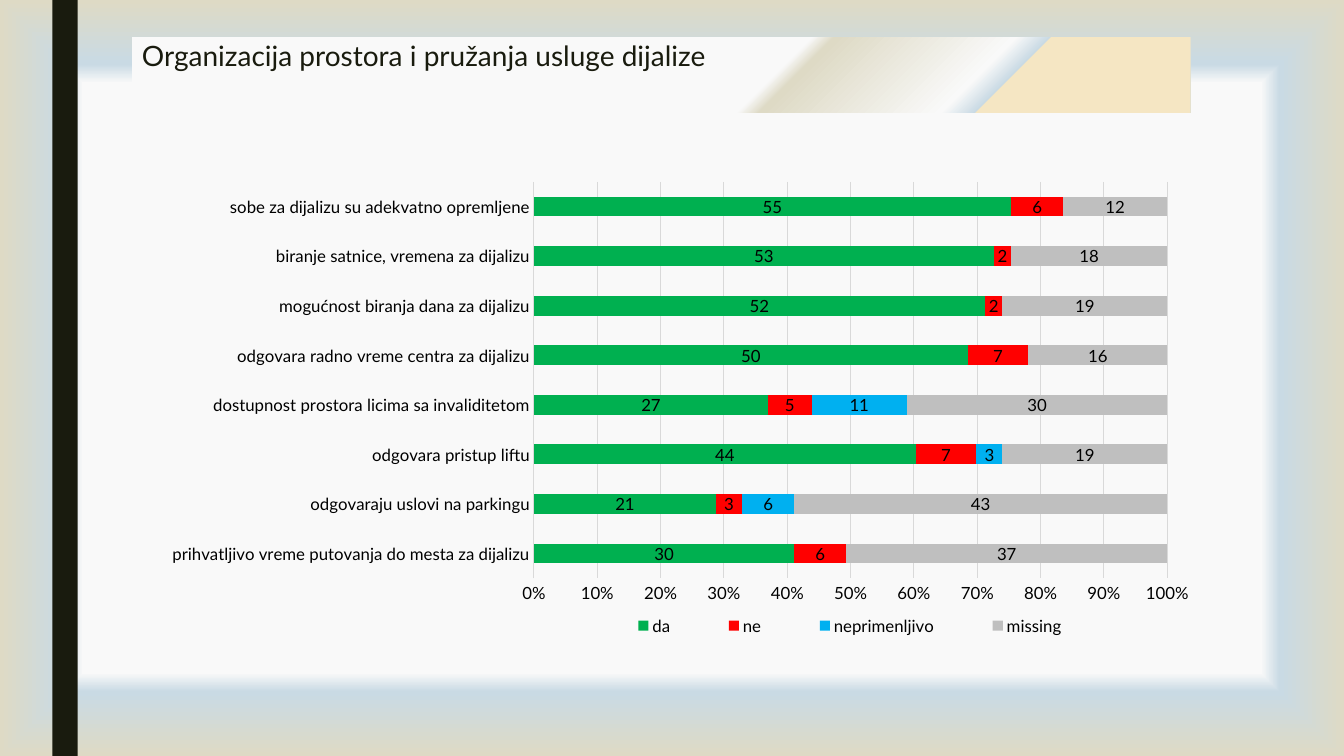
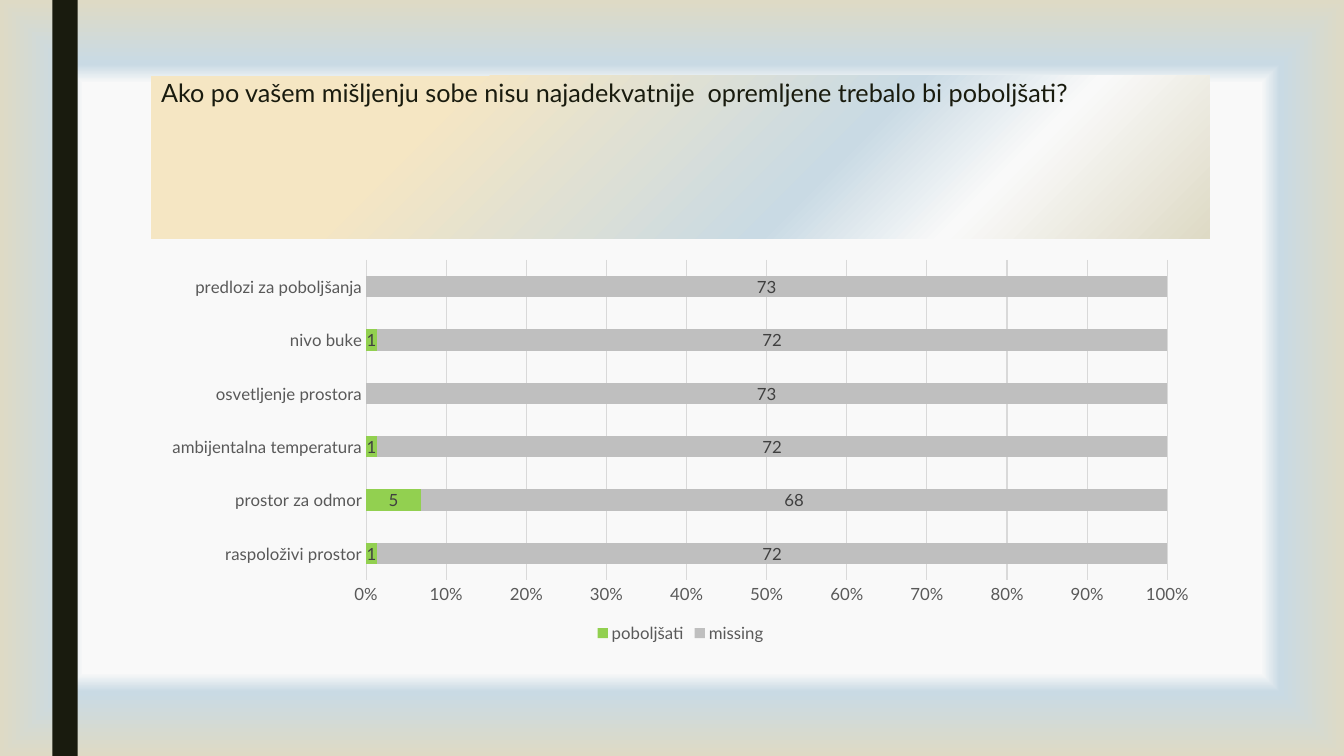
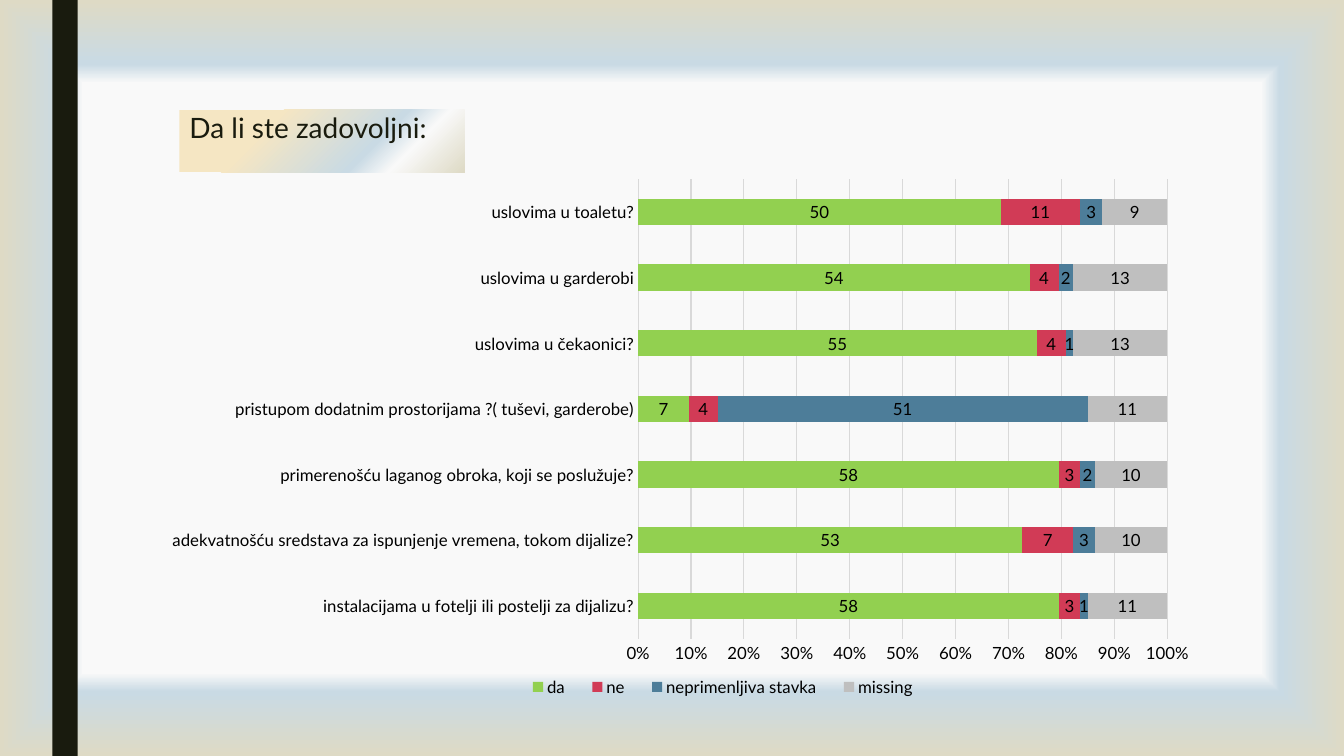
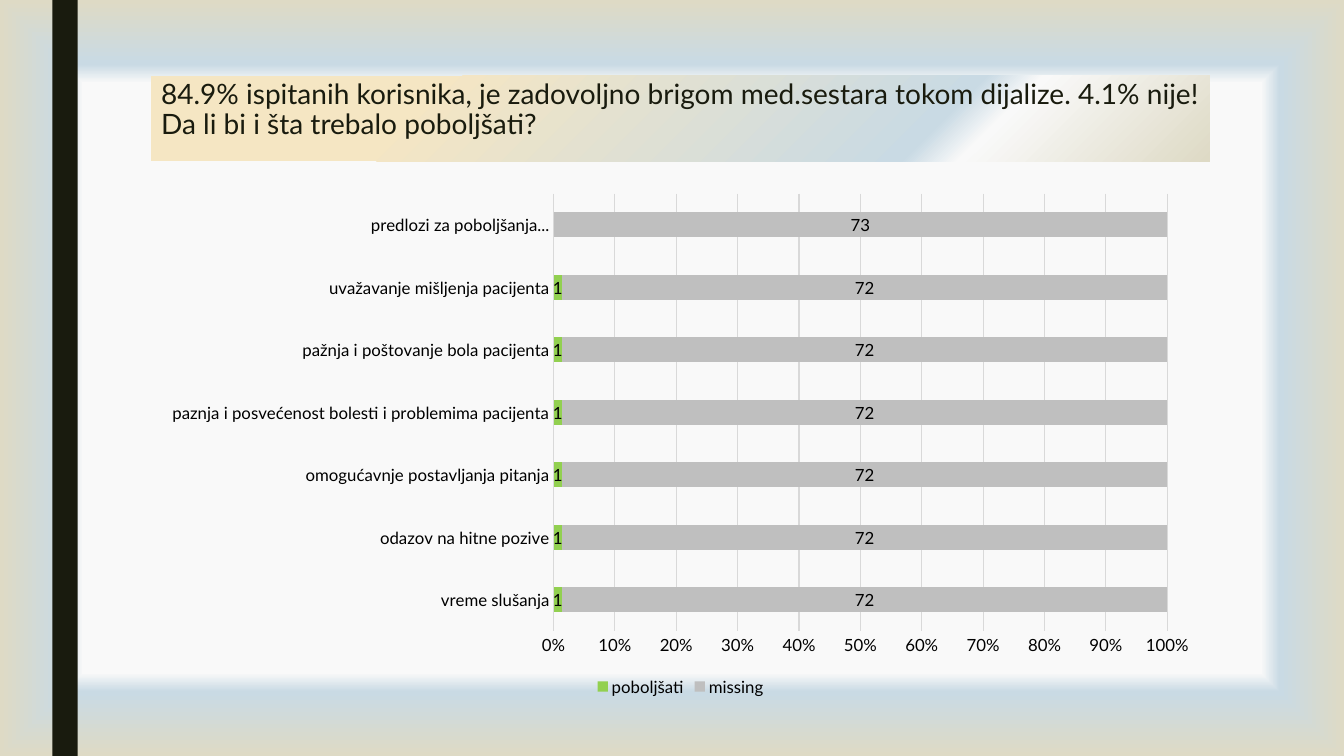
from dataclasses import dataclass
from typing import Optional

from pptx import Presentation
from pptx import util as u
from pptx.chart import data as cd
from pptx.dml.color import RGBColor
from pptx.enum import chart as ce
from pptx.enum import shapes, text
from pptx.oxml import ns, parse_xml

FONT = "Lato"
INK = RGBColor(0x19, 0x1B, 0x0E)
BLACK = RGBColor(0x00, 0x00, 0x00)
GREY = RGBColor(0x59, 0x59, 0x59)
DARK = RGBColor(0x40, 0x40, 0x40)
RULE = RGBColor(0xD9, 0xD9, 0xD9)
PALE = RGBColor(0xF9, 0xF9, 0xF9)
BLUE = RGBColor(0xC9, 0xDA, 0xE4)
SAND = RGBColor(0xDE, 0xDA, 0xC5)
CREAM = RGBColor(0xF5, 0xE6, 0xC3)
GREEN = RGBColor(0x00, 0xB0, 0x50)
LIME = RGBColor(0x92, 0xD0, 0x50)
RED = RGBColor(0xFF, 0x00, 0x00)
ROSE = RGBColor(0xD1, 0x3B, 0x56)
SKY = RGBColor(0x00, 0xB0, 0xF0)
STEEL = RGBColor(0x4D, 0x7D, 0x99)
SILVER = RGBColor(0xBF, 0xBF, 0xBF)

Stops = list[tuple[int, RGBColor]]
Box = tuple[float, float, float, float]

BACK: Stops = [(78, PALE), (83, BLUE), (100, SAND), (100, CREAM)]
CENTRE = ('<a:path path="shape"><a:fillToRect l="50000" t="50000" '
          'r="50000" b="50000"/></a:path>')
SLANT = '<a:lin ang="2700000" scaled="0"/>'


@dataclass
class Title:
    box: Box
    lines: list[str]
    stops: Stops
    size: int = 20


@dataclass
class Series:
    name: str
    color: RGBColor
    vals: list[Optional[int]]


@dataclass
class Graph:
    box: Box
    cats: list[str]
    series: list[Series]
    ink: RGBColor = BLACK
    label: RGBColor = BLACK
    legend: Optional[Box] = None


@dataclass
class Page:
    title: Title
    graph: Graph
    front: bool = False


PAGES = [
    Page(
        Title((1.31, 0.37, 10.5, 0.75),
              ["Organizacija prostora i pružanja usluge dijalize"],
              [(60, PALE), (62, SAND), (78, PALE), (81, BLUE), (81, CREAM)]),
        Graph((1.5, 1.71, 10.5, 4.71),
              ["prihvatljivo vreme putovanja do mesta za dijalizu",
               "odgovaraju uslovi na parkingu",
               "odgovara pristup liftu",
               "dostupnost prostora licima sa invaliditetom",
               "odgovara radno vreme centra za dijalizu",
               "mogućnost biranja dana za dijalizu",
               "biranje satnice, vremena za dijalizu",
               "sobe za dijalizu su adekvatno opremljene"],
              [Series("da", GREEN, [30, 21, 44, 27, 50, 52, 53, 55]),
               Series("ne", RED, [6, 3, 7, 5, 7, 2, 2, 6]),
               Series("neprimenljivo", SKY, [None, 6, 3, 11] + [None] * 4),
               Series("missing", SILVER, [37, 43, 19, 30, 16, 19, 18, 12])],
              legend=(0.41, 0.92, 0.5, 0.07)),
        front=True),
    Page(
        Title((1.5, 0.75, 10.5, 1.62),
              ["Ako po vašem mišljenju sobe nisu najadekvatnije  "
               "opremljene trebalo bi poboljšati?"],
              [(26, CREAM), (63, BLUE), (78, PALE), (100, SAND)], 18),
        Graph((1.5, 2.5, 10.5, 3.92),
              ["raspoloživi prostor", "prostor za odmor",
               "ambijentalna temperatura", "osvetljenje prostora",
               "nivo buke", "predlozi za poboljšanja"],
              [Series("poboljšati", LIME, [1, 5, 1, None, 1, None]),
               Series("missing", SILVER, [72, 68, 72, 73, 72, 73])],
              GREY, DARK)),
    Page(
        Title((1.78, 1.09, 2.83, 0.62), ["Da li ste zadovoljni:"],
              [(17, CREAM), (30, CREAM), (66, BLUE), (78, PALE), (100, SAND)]),
        Graph((1.5, 1.67, 10.5, 5.36),
              ["instalacijama u fotelji ili postelji za dijalizu?",
               "adekvatnošću sredstava za ispunjenje vremena, tokom dijalize?",
               "primerenošću laganog obroka, koji se poslužuje?",
               "pristupom dodatnim prostorijama ?( tuševi, garderobe)",
               "uslovima u čekaonici?",
               "uslovima u garderobi",
               "uslovima u toaletu?"],
              [Series("da", LIME, [58, 53, 58, 7, 55, 54, 50]),
               Series("ne", ROSE, [3, 7, 3, 4, 4, 4, 11]),
               Series("neprimenljiva stavka", STEEL, [1, 3, 2, 51, 1, 2, 3]),
               Series("missing", SILVER, [11, 10, 10, 11, 13, 13, 9])],
              legend=(0.34, 0.93, 0.4, 0.06))),
    Page(
        Title((1.5, 0.75, 10.5, 0.85),
              ["84.9% ispitanih korisnika, je zadovoljno brigom med.sestara "
               "tokom dijalize. 4.1% nije!",
               "Da li bi i šta trebalo poboljšati?"],
              [(25, CREAM), (73, BLUE), (78, PALE), (100, SAND)]),
        Graph((1.5, 1.82, 10.5, 5.13),
              ["vreme slušanja", "odazov na hitne pozive",
               "omogućavnje postavljanja pitanja",
               "paznja i posvećenost bolesti i problemima pacijenta",
               "pažnja i poštovanje bola pacijenta",
               "uvažavanje mišljenja pacijenta",
               "predlozi za poboljšanja..."],
              [Series("poboljšati", LIME, [1] * 6 + [None]),
               Series("missing", SILVER, [72] * 6 + [73])])),
]


def place(box: Box) -> list[u.Length]:
    return [u.Inches(n) for n in box]


def blend(fill, root, stops: Stops, mode: str) -> None:
    fill.gradient()
    old = root.find(".//" + ns.qn("a:gradFill"))
    marks = "".join(
        f'<a:gs pos="{pos * 1000}"><a:srgbClr val="{color}"/></a:gs>'
        for pos, color in stops)
    new = parse_xml(f'<a:gradFill {ns.nsdecls("a")} rotWithShape="1">'
                    f'<a:gsLst>{marks}</a:gsLst>{mode}</a:gradFill>')
    old.getparent().replace(old, new)


def style(font, size: int, color: RGBColor) -> None:
    font.name = FONT
    font.size = u.Pt(size)
    font.color.rgb = color


def add_band(slide) -> None:
    band = slide.shapes.add_shape(shapes.MSO_SHAPE.RECTANGLE,
                                  *place((0.52, 0, 0.25, 7.5)))
    band.shadow.inherit = False
    band.fill.solid()
    band.fill.fore_color.rgb = INK
    band.line.fill.background()


def add_title(slide, title: Title) -> None:
    box = slide.shapes.add_textbox(*place(title.box))
    blend(box.fill, box.element, title.stops, SLANT)
    frame = box.text_frame
    frame.word_wrap = True
    frame.auto_size = text.MSO_AUTO_SIZE.NONE
    frame.vertical_anchor = text.MSO_ANCHOR.TOP
    para = frame.paragraphs[0]
    para.line_spacing = 0.89
    for i, line in enumerate(title.lines):
        if i:
            para.add_line_break()
        run = para.add_run()
        run.text = line
        style(run.font, title.size, INK)


def set_legend(chart, graph: Graph) -> None:
    chart.has_legend = True
    legend = chart.legend
    legend.position = ce.XL_LEGEND_POSITION.BOTTOM
    legend.include_in_layout = False
    style(legend.font, 12, graph.ink)
    if graph.legend:
        root = chart.element.find(".//" + ns.qn("c:legend"))
        for old in root.findall(ns.qn("c:layout")):
            root.remove(old)
        sizes = "".join(f'<c:{key} val="{val}"/>'
                        for key, val in zip("xywh", graph.legend))
        root.find(ns.qn("c:legendPos")).addnext(parse_xml(
            f'<c:layout {ns.nsdecls("c")}><c:manualLayout>'
            '<c:xMode val="edge"/><c:yMode val="edge"/>'
            f'{sizes}</c:manualLayout></c:layout>'))


def add_graph(slide, graph: Graph) -> None:
    data = cd.CategoryChartData()
    data.categories = graph.cats
    for item in graph.series:
        data.add_series(item.name, item.vals)
    chart = slide.shapes.add_chart(ce.XL_CHART_TYPE.BAR_STACKED_100,
                                   *place(graph.box), data).chart
    chart.has_title = False
    style(chart.font, 10, BLACK)
    set_legend(chart, graph)

    cats, vals = chart.category_axis, chart.value_axis
    for axis in (cats, vals):
        axis.major_tick_mark = ce.XL_TICK_MARK.NONE
        axis.minor_tick_mark = ce.XL_TICK_MARK.NONE
        style(axis.tick_labels.font, 12, graph.ink)
    vals.has_major_gridlines = True
    for line in (cats.format.line, vals.major_gridlines.format.line):
        line.color.rgb = RULE
        line.width = u.Pt(0.75)
    vals.format.line.fill.background()
    vals.tick_labels.number_format = "0%"
    vals.tick_labels.number_format_is_linked = False

    plot = chart.plots[0]
    plot.vary_by_categories = False
    plot.gap_width = 150
    plot.overlap = 100
    for item, bar in zip(graph.series, plot.series):
        bar.format.fill.solid()
        bar.format.fill.fore_color.rgb = item.color
        bar.invert_if_negative = False
        labels = bar.data_labels
        labels.show_value = True
        labels.position = ce.XL_LABEL_POSITION.CENTER
        style(labels.font, 12, graph.label)


def main() -> None:
    deck = Presentation()
    deck.slide_width = u.Inches(13.33)
    deck.slide_height = u.Inches(7.5)
    master = deck.slide_master
    blend(master.background.fill, master.element, BACK, CENTRE)
    for page in PAGES:
        slide = deck.slides.add_slide(deck.slide_layouts[6])
        add_band(slide)
        if page.front:
            add_graph(slide, page.graph)
            add_title(slide, page.title)
        else:
            add_title(slide, page.title)
            add_graph(slide, page.graph)
    deck.save("out.pptx")


if __name__ == "__main__":
    main()
